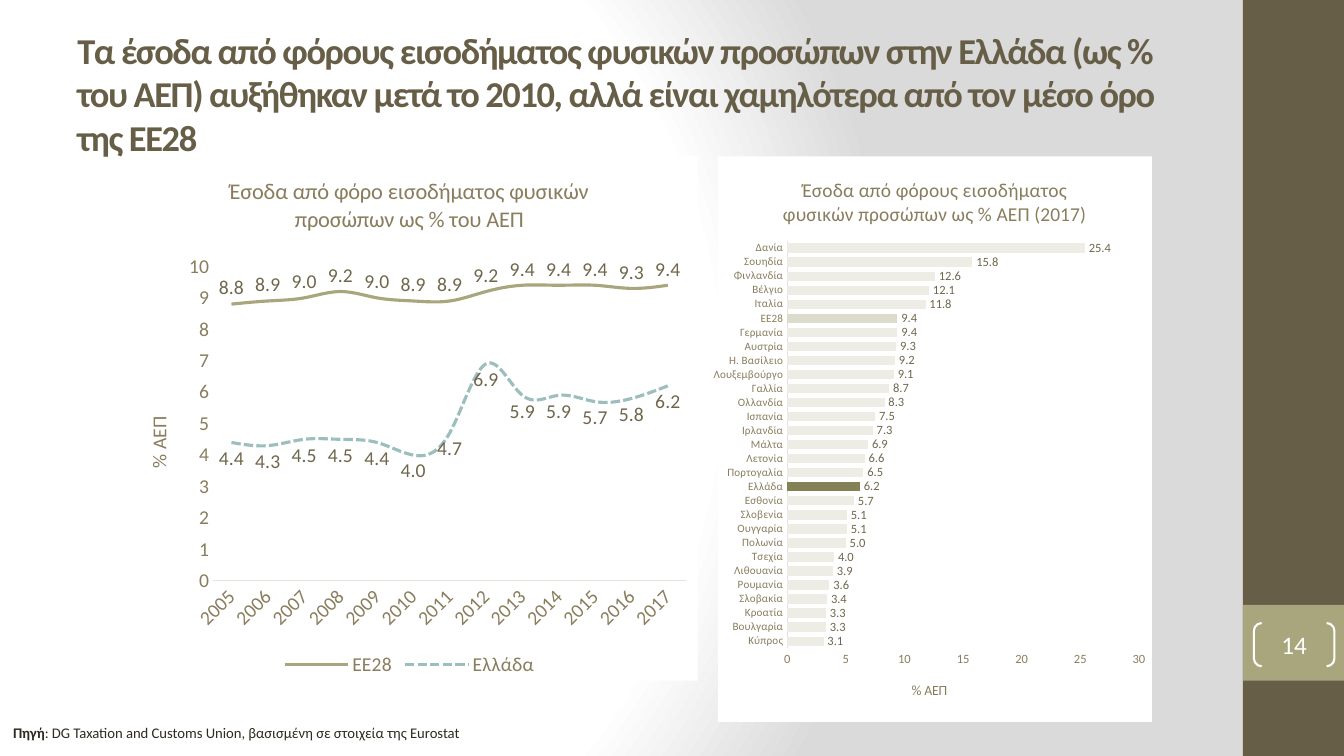
from dataclasses import dataclass, field

from lxml.etree import SubElement
from pptx import Presentation
from pptx.chart.data import CategoryChartData
from pptx.dml.color import RGBColor
from pptx.enum.chart import XL_CHART_TYPE as ChartType
from pptx.enum.chart import XL_LABEL_POSITION as LabelPos
from pptx.enum.chart import XL_LEGEND_POSITION as LegendPos
from pptx.enum.chart import XL_TICK_MARK as TickMark
from pptx.enum.dml import MSO_LINE as Dash
from pptx.enum.shapes import MSO_SHAPE as Shape
from pptx.enum.text import MSO_ANCHOR as Anchor
from pptx.enum.text import PP_ALIGN as Align
from pptx.oxml.ns import qn
from pptx.util import Cm, Pt

FONT = "Calibri"
BROWN, OLIVE, WHITE, INK = "675E47", "A9A57C", "FFFFFF", "2F2B20"
AXIS_TEXT, LABEL_TEXT, AXIS_LINE = "897D5D", "6F664C", "E5E2D9"

Box = tuple[float, float, float, float]


@dataclass
class Run:
    text: str
    size: float
    color: str
    bold: bool = False
    spacing: int = 0


@dataclass
class Series:
    name: str
    values: list[float]
    color: str
    label_pos: LabelPos
    dash: Dash | None = None
    points: dict[int, str] = field(default_factory=dict)


@dataclass
class ChartSpec:
    kind: ChartType
    box: Box
    title: str
    title_size: float
    categories: list[str]
    series: list[Series]
    plot_area: Box
    maximum: float
    step: float
    category_size: float
    value_size: float
    label_size: float
    axis_title_size: float
    legend: bool = False


COUNTRIES = [
    ("Κύπρος", 3.1), ("Βουλγαρία", 3.3), ("Κροατία", 3.3), ("Σλοβακία", 3.4),
    ("Ρουμανία", 3.6), ("Λιθουανία", 3.9), ("Τσεχία", 4.0), ("Πολωνία", 5.0),
    ("Ουγγαρία", 5.1), ("Σλοβενία", 5.1), ("Εσθονία", 5.7), ("Ελλάδα", 6.2),
    ("Πορτογαλία", 6.5), ("Λετονία", 6.6), ("Μάλτα", 6.9), ("Ιρλανδία", 7.3),
    ("Ισπανία", 7.5), ("Ολλανδία", 8.3), ("Γαλλία", 8.7), ("Λουξεμβούργο", 9.1),
    ("Η. Βασίλειο", 9.2), ("Αυστρία", 9.3), ("Γερμανία", 9.4), ("ΕΕ28", 9.4),
    ("Ιταλία", 11.8), ("Βέλγιο", 12.1), ("Φινλανδία", 12.6), ("Σουηδία", 15.8),
    ("Δανία", 25.4),
]
NAMES = [name for name, _ in COUNTRIES]

CHARTS = [
    ChartSpec(
        ChartType.BAR_CLUSTERED, (17.98, 3.94, 11.05, 14.25),
        "Έσοδα από φόρους εισοδήματος φυσικών προσώπων ως % ΑΕΠ (2017)", 14,
        NAMES,
        [Series("Series 1", [value for _, value in COUNTRIES], "EEEDE5", LabelPos.OUTSIDE_END,
                points={NAMES.index("Ελλάδα"): "858157", NAMES.index("ΕΕ28"): "DDDBCB"})],
        (0.16, 0.15, 0.81, 0.72), 30, 5, 8, 9, 9, 10),
    ChartSpec(
        ChartType.LINE, (3.05, 3.94, 14.53, 13.21),
        "Έσοδα από φόρο εισοδήματος φυσικών προσώπων ως % του ΑΕΠ", 16,
        [str(year) for year in range(2005, 2018)],
        [Series("ΕΕ28", [8.8, 8.9, 9.0, 9.2, 9.0, 8.9, 8.9, 9.2, 9.4, 9.4, 9.4, 9.3, 9.4],
                OLIVE, LabelPos.ABOVE),
         Series("Ελλάδα", [4.4, 4.3, 4.5, 4.5, 4.4, 4.0, 4.7, 6.9, 5.9, 5.9, 5.7, 5.8, 6.2],
                "9CBEBD", LabelPos.BELOW, Dash.SQUARE_DOT)],
        (0.16, 0.21, 0.82, 0.6), 10, 1, 14, 14, 14, 14, legend=True),
]


def rgb(value: str) -> RGBColor:
    return RGBColor.from_string(value)


def lengths(box: Box) -> list[Cm]:
    return [Cm(v) for v in box]


def style_font(font, size: float, color: str, bold: bool = False) -> None:
    font.name, font.size, font.bold = FONT, Pt(size), bold
    font.color.rgb = rgb(color)


def add_runs(p, runs: list[Run]) -> None:
    for run in runs:
        r = p.add_run()
        r.text = run.text
        style_font(r.font, run.size, run.color, run.bold)
        if run.spacing:
            r.font._element.set("spc", str(run.spacing))


def add_text(slide, box: Box, runs: list[Run], anchor: Anchor = Anchor.TOP) -> None:
    tf = slide.shapes.add_textbox(*lengths(box)).text_frame
    tf.word_wrap, tf.vertical_anchor = True, anchor
    add_runs(tf.paragraphs[0], runs)


def add_rect(slide, box: Box, color: str) -> None:
    sp = slide.shapes.add_shape(Shape.RECTANGLE, *lengths(box))
    sp.shadow.inherit = False
    sp.fill.solid()
    sp.fill.fore_color.rgb = rgb(color)
    sp.line.fill.background()


def add_page_number(slide, box: Box, number: str) -> None:
    sp = slide.shapes.add_shape(Shape.DOUBLE_BRACKET, *lengths(box))
    sp.adjustments[0] = 0.18
    sp.shadow.inherit = False
    sp.fill.background()
    sp.line.color.rgb, sp.line.width = rgb(WHITE), Pt(1.5)
    tf = sp.text_frame
    tf.margin_left = tf.margin_top = tf.margin_right = tf.margin_bottom = 0
    tf.vertical_anchor = Anchor.MIDDLE
    tf.paragraphs[0].alignment = Align.CENTER
    add_runs(tf.paragraphs[0], [Run(number, 18, WHITE)])


def set_background(slide) -> None:
    """Radial gradient from white to grey, centred left of the middle."""
    slide.background.fill.gradient()
    grad = next(slide.element.iter(qn("a:gradFill")))
    for child in list(grad):
        grad.remove(child)
    stops = SubElement(grad, qn("a:gsLst"))
    for pos, color in ((0, WHITE), (75, WHITE), (100, "DADADA")):
        stop = SubElement(stops, qn("a:gs"), pos=str(pos * 1000))
        SubElement(stop, qn("a:srgbClr"), val=color)
    circle = SubElement(grad, qn("a:path"), path="circle")
    SubElement(circle, qn("a:fillToRect"), l="20000", t="50000", r="100000", b="50000")


def set_plot_area(chart, area: Box) -> None:
    plot_area = next(chart.element.iter(qn("c:plotArea")))
    for old in plot_area.findall(qn("c:layout")):
        plot_area.remove(old)
    layout = SubElement(plot_area, qn("c:layout"))
    plot_area.insert(0, layout)
    manual = SubElement(layout, qn("c:manualLayout"))
    settings = [("layoutTarget", "inner"), ("xMode", "edge"), ("yMode", "edge")]
    for tag, val in settings + list(zip("xywh", area)):
        SubElement(manual, qn(f"c:{tag}"), val=str(val))


def style_axes(chart, spec: ChartSpec) -> None:
    cat, val = chart.category_axis, chart.value_axis
    for axis, size in ((cat, spec.category_size), (val, spec.value_size)):
        axis.major_tick_mark = axis.minor_tick_mark = TickMark.NONE
        axis.has_major_gridlines = False
        style_font(axis.tick_labels.font, size, AXIS_TEXT)
    cat.format.line.color.rgb, cat.format.line.width = rgb(AXIS_LINE), Pt(0.75)
    val.format.line.fill.background()
    val.minimum_scale, val.maximum_scale, val.major_unit = 0, spec.maximum, spec.step
    val.tick_labels.number_format, val.tick_labels.number_format_is_linked = "0", False
    add_runs(val.axis_title.text_frame.paragraphs[0],
             [Run("% ΑΕΠ", spec.axis_title_size, AXIS_TEXT)])
    cat_xml = next(chart.element.iter(qn("c:catAx")))
    if spec.kind == ChartType.LINE:
        cat_xml.find(qn("c:txPr")).find(qn("a:bodyPr")).set("rot", "-2700000")
        title_body = next(val.axis_title._element.iter(qn("a:bodyPr")))
        title_body.set("rot", "-5400000")
        title_body.set("vert", "horz")
    else:
        skip = SubElement(cat_xml, qn("c:tickLblSkip"), val="2")
        cat_xml.find(qn("c:noMultiLvlLbl")).addprevious(skip)


def style_series(ser, item: Series, is_line: bool, label_size: float) -> None:
    if is_line:
        ser.smooth = True
        ser.format.line.color.rgb, ser.format.line.width = rgb(item.color), Pt(2.25)
        if item.dash:
            ser.format.line.dash_style = item.dash
    else:
        ser.invert_if_negative = False
        fills = [(ser, item.color)] + [(ser.points[i], c) for i, c in item.points.items()]
        for target, color in fills:
            target.format.fill.solid()
            target.format.fill.fore_color.rgb = rgb(color)
    labels = ser.data_labels
    labels.show_value, labels.position = True, item.label_pos
    labels.number_format, labels.number_format_is_linked = "0.0", False
    style_font(labels.font, label_size, LABEL_TEXT)


def add_chart(slide, spec: ChartSpec) -> None:
    data = CategoryChartData(number_format="0.0")
    data.categories = spec.categories
    for item in spec.series:
        data.add_series(item.name, item.values)
    chart = slide.shapes.add_chart(spec.kind, *lengths(spec.box), data).chart
    style_font(chart.font, spec.label_size, INK)
    add_runs(chart.chart_title.text_frame.paragraphs[0],
             [Run(spec.title, spec.title_size, AXIS_TEXT)])
    chart.chart_title.include_in_layout = False
    chart.has_legend = spec.legend
    if spec.legend:
        chart.legend.position, chart.legend.include_in_layout = LegendPos.BOTTOM, False
        style_font(chart.legend.font, 14, AXIS_TEXT)
    style_axes(chart, spec)
    set_plot_area(chart, spec.plot_area)
    plot = chart.plots[0]
    plot.vary_by_categories = False
    is_line = spec.kind == ChartType.LINE
    if not is_line:
        plot.gap_width = 50
    for ser, item in zip(plot.series, spec.series):
        style_series(ser, item, is_line, spec.label_size)
    sp_pr = SubElement(chart.element, qn("c:spPr"))
    chart.element.find(qn("c:chart")).addnext(sp_pr)
    SubElement(SubElement(sp_pr, qn("a:solidFill")), qn("a:srgbClr"), val=WHITE)
    SubElement(SubElement(sp_pr, qn("a:ln")), qn("a:noFill"))


def main() -> None:
    prs = Presentation()
    prs.slide_width, prs.slide_height = Cm(33.87), Cm(19.05)
    slide = prs.slides.add_slide(prs.slide_layouts[6])
    set_background(slide)
    add_rect(slide, (31.32, 0, 2.55, 19.05), BROWN)
    add_rect(slide, (31.32, 15.24, 2.55, 1.91), OLIVE)
    add_text(slide, (1.7, 0.76, 28.78, 3.18), [Run(
        "Τα έσοδα από φόρους εισοδήματος φυσικών προσώπων στην Ελλάδα (ως % του ΑΕΠ) "
        "αυξήθηκαν μετά το 2010, αλλά είναι χαμηλότερα από τον μέσο όρο της ΕΕ28",
        26, BROWN, bold=True, spacing=-100)], Anchor.MIDDLE)
    add_page_number(slide, (31.6, 15.7, 2.03, 1.09), "14")
    for spec in CHARTS:
        add_chart(slide, spec)
    add_text(slide, (0.08, 18.11, 11.99, 0.74), [
        Run("Πηγή", 10.5, INK, bold=True),
        Run(": DG Taxation and Customs Union, βασισμένη σε στοιχεία της Eurostat", 10.5, INK)])
    prs.save("out.pptx")


if __name__ == "__main__":
    main()
